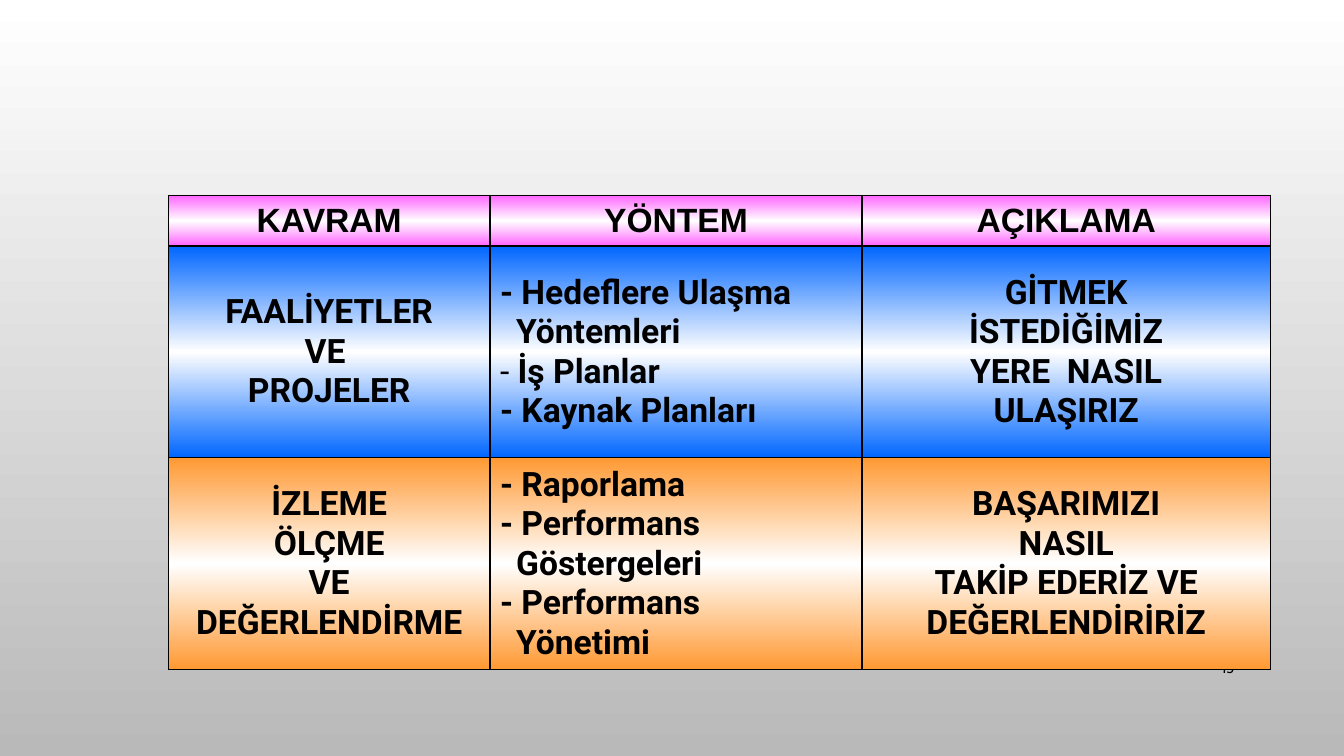
import copy

import pptx
import pptx.dml.color
import pptx.enum.text
import pptx.oxml
import pptx.oxml.ns
import pptx.util
from pptx.util import Inches

COLORS = {
    "black": "000000",
    "white": "FFFFFF",
    "gray": "B9B9B9",
    "pink": "FF66FF",
    "blue": "0066FF",
    "orange": "FF9933",
}
ALIGN = pptx.enum.text.PP_ALIGN
MIDDLE = pptx.enum.text.MSO_ANCHOR.MIDDLE


def rgb(name):
    return pptx.dml.color.RGBColor.from_string(COLORS[name])


def fill_downward(fill, top, bottom):
    """Fill with a vertical gradient from the top colour to the bottom one."""
    fill.gradient()
    fill.gradient_angle = 270
    for stop, color, position in zip(fill.gradient_stops, (top, bottom), (0, 1)):
        stop.color.rgb = rgb(color)
        stop.position = position


deck = pptx.Presentation()
deck.slide_width = Inches(13.33)
deck.slide_height = Inches(7.5)
page = deck.slides.add_slide(deck.slide_layouts[6])
fill_downward(page.background.fill, "white", "gray")

# Page number, partly behind the table
number_box = page.shapes.add_textbox(Inches(11.5), Inches(6.43), Inches(0.84), Inches(0.4))
number_box.text_frame.word_wrap = True
number_box.text_frame.vertical_anchor = MIDDLE
number_para = number_box.text_frame.paragraphs[0]
number_para.text = "13"
number_para.alignment = ALIGN.RIGHT
number_para.font.size = pptx.util.Pt(10)
number_para.font.name = "Cabin"
number_para.font.color.rgb = rgb("black")

# Each row: fill colour, font, height, cell texts
rows = [
    ("pink", "Arial", 0.5, ["KAVRAM", "YÖNTEM", "AÇIKLAMA"]),
    ("blue", "Roboto", 2.1, [
        "FAALİYETLER\nVE \nPROJELER",
        "- Hedeflere Ulaşma\nYöntemleri\n- İş Planlar\n- Kaynak Planları",
        "GİTMEK\nİSTEDİĞİMİZ\nYERE  NASIL\nULAŞIRIZ",
    ]),
    ("orange", "Roboto", 2.1, [
        "İZLEME\nÖLÇME\nVE\nDEĞERLENDİRME",
        "- Raporlama\n- Performans\nGöstergeleri\n- Performans\nYönetimi",
        "BAŞARIMIZI\nNASIL\nTAKİP EDERİZ VE\nDEĞERLENDİRİRİZ",
    ]),
]
column_widths = [3.19, 3.69, 4.05]
table = page.shapes.add_table(
    len(rows), len(column_widths), Inches(1.67), Inches(1.94), Inches(10.93), Inches(4.7)
).table
table.first_row = False
table.horz_banding = False
for column, width in zip(table.columns, column_widths):
    column.width = Inches(width)

for row_index, (color, font_name, height, texts) in enumerate(rows):
    table.rows[row_index].height = Inches(height)
    for column_index, text in enumerate(texts):
        cell = table.cell(row_index, column_index)
        cell.vertical_anchor = MIDDLE
        cell.margin_left = cell.margin_right = Inches(0.1)
        cell.margin_top = cell.margin_bottom = Inches(0.05)

        properties = cell._tc.get_or_add_tcPr()
        for side in ("lnL", "lnR", "lnT", "lnB"):
            properties.append(pptx.oxml.parse_xml(
                f'<a:{side} {pptx.oxml.ns.nsdecls("a")} w="12700"><a:solidFill>'
                f'<a:srgbClr val="{COLORS["black"]}"/></a:solidFill></a:{side}>'
            ))

        # White in the middle, the row colour at both edges
        fill_downward(cell.fill, color, "white")
        cell.fill.gradient_stops[1].position = 0.5
        stops = properties.find(".//" + pptx.oxml.ns.qn("a:gsLst"))
        stops.append(copy.deepcopy(stops[0]))
        cell.fill.gradient_stops[2].position = 1

        is_method = row_index > 0 and column_index == 1
        cell.text_frame.text = text
        for para in cell.text_frame.paragraphs:
            para.alignment = ALIGN.LEFT if is_method else ALIGN.CENTER
            if is_method and not para.text.startswith("-"):
                para._p.get_or_add_pPr().set("marL", str(Inches(0.16)))
            if para.text == "- İş Planlar":
                para.runs[0].text = "- "
                para.add_run().text = "İş Planlar"
            for span in para.runs:
                span.font.size = pptx.util.Pt(24)
                span.font.name = font_name
                span.font.bold = span.text != "- "
                span.font.color.rgb = rgb("black")

deck.save("out.pptx")
